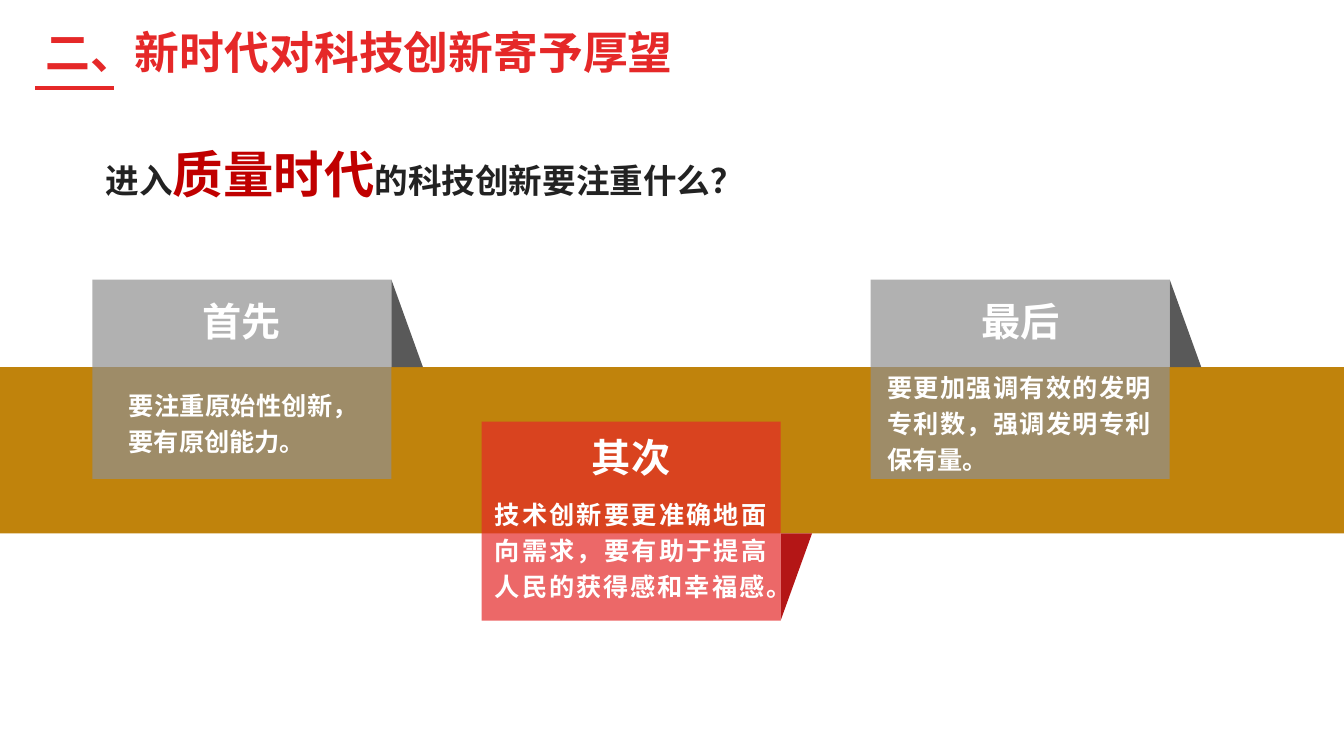
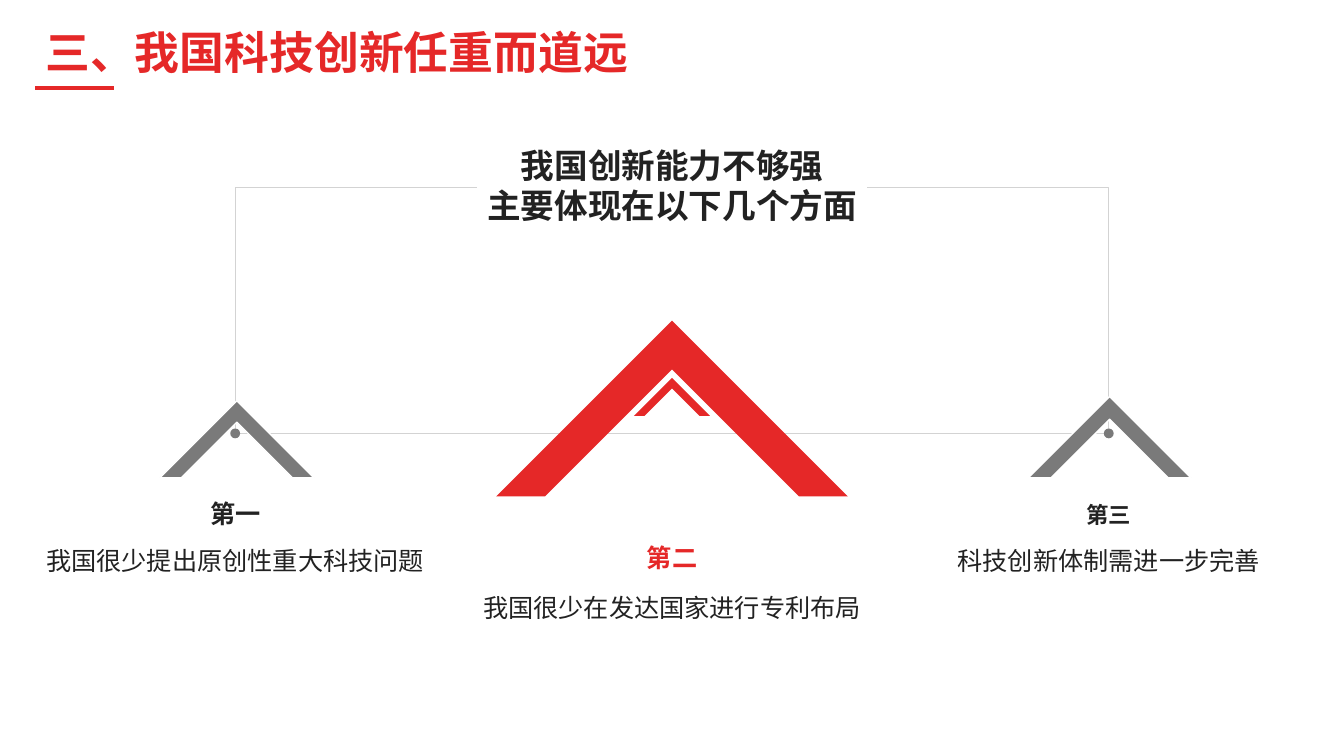
"""Two slides on science and technology innovation, laid out on a 160 by 90 grid."""
import dataclasses

import lxml.etree
import pptx
import pptx.dml.color
import pptx.enum.shapes
import pptx.enum.text
import pptx.oxml.ns
import pptx.util

SHAPE = pptx.enum.shapes.MSO_SHAPE
ALIGN = pptx.enum.text.PP_ALIGN
COLUMNS, ROWS = 160, 90


@dataclasses.dataclass(frozen=True)
class Theme:
    font: str = "Arial"
    red: str = "E52828"
    dark_red: str = "B41616"
    accent: str = "C00000"
    gold: str = "C0830C"
    ink: str = "222222"
    white: str = "FFFFFF"
    card_grey: str = "909090"
    fold_grey: str = "595959"
    chevron_grey: str = "7A7A7A"
    frame_grey: str = "D3D3D3"
    title: int = 32
    keyword: int = 36
    card_heading: int = 28
    question: int = 24
    body: int = 18
    small: int = 16


def grid(cells):
    return pptx.util.Inches(cells / 12)


def rgb(value):
    return pptx.dml.color.RGBColor.from_string(value)


def apply(target, values):
    for name, value in values.items():
        setattr(target, name, value)


class Deck:
    def __init__(self, theme):
        self.theme = theme
        self.show = pptx.Presentation()
        apply(self.show, {"slide_width": grid(COLUMNS), "slide_height": grid(ROWS)})
        self.slide = None

    def start(self, title):
        self.slide = self.show.slides.add_slide(self.show.slide_layouts[5])
        self.underline(4.2, 10.45, 9.35)
        heading = self.slide.shapes.title
        places = zip(("left", "top", "width", "height"), (4.2, 2.3, 80, 7.7))
        apply(heading, {side: grid(cells) for side, cells in places})
        self.fill_text(heading, [[(title, self.theme.title, self.theme.red)]], bold=True)

    def underline(self, left, top, width):
        rule = self.slide.shapes.add_connector(
            pptx.enum.shapes.MSO_CONNECTOR.STRAIGHT,
            grid(left), grid(top), grid(left + width), grid(top))
        apply(rule.line, {"width": pptx.util.Pt(3)})
        rule.line.color.rgb = rgb(self.theme.red)
        lxml.etree.SubElement(rule._element.spPr, pptx.oxml.ns.qn("a:effectLst"))

    def fill_text(self, holder, paragraphs, align=ALIGN.LEFT, bold=False, spacing=1.0):
        frame = holder.text_frame
        apply(frame, {"word_wrap": True,
                      "auto_size": pptx.enum.text.MSO_AUTO_SIZE.NONE,
                      "vertical_anchor": pptx.enum.text.MSO_ANCHOR.TOP})
        for index, runs in enumerate(paragraphs):
            paragraph = frame.add_paragraph() if index else frame.paragraphs[0]
            apply(paragraph, {"alignment": align, "line_spacing": spacing})
            for words, size, colour in runs:
                run = paragraph.add_run()
                run.text = words
                apply(run.font, {"name": self.theme.font, "bold": bold,
                                 "size": pptx.util.Pt(size)})
                run.font.color.rgb = rgb(colour)

    def text(self, left, top, width, height, runs, **style):
        box = self.slide.shapes.add_textbox(*map(grid, (left, top, width, height)))
        self.fill_text(box, [runs], **style)

    def shape(self, kind, left, top, width, height, fill=None, line=None, alpha=None):
        part = self.slide.shapes.add_shape(
            kind, *map(grid, (left, top, width, height)))
        part.shadow.inherit = False
        if fill:
            part.fill.solid()
            part.fill.fore_color.rgb = rgb(fill)
        else:
            part.fill.background()
        if line:
            part.line.color.rgb = rgb(line)
            part.line.width = pptx.util.Pt(1)
        else:
            part.line.fill.background()
        if alpha:
            colour = part._element.spPr.find(".//" + pptx.oxml.ns.qn("a:srgbClr"))
            lxml.etree.SubElement(
                colour, pptx.oxml.ns.qn("a:alpha"), val=str(alpha * 1000))
        return part

    def fold(self, left, top, width, height, fill, flipped):
        corner = self.shape(SHAPE.RIGHT_TRIANGLE, left, top, width, height, fill)
        if flipped:
            corner._element.spPr.xfrm.set("flipV", "1")

    def chevron(self, centre, middle, size, fill, line=None):
        roof = self.shape(SHAPE.HALF_FRAME, centre - size / 2, middle - size / 2,
                          size, size, fill, line)
        roof.rotation = 45
        for index in range(2):
            roof.adjustments[index] = 0.139

    def dot(self, centre, middle, size, colour):
        self.shape(SHAPE.OVAL, centre - size / 2, middle - size / 2,
                   size, size, colour, colour)


def quality_era(deck):
    theme = deck.theme
    deck.start("二、新时代对科技创新寄予厚望")
    deck.text(11.4, 16.45, 80, 8.5, [
        ("进入", theme.question, theme.ink),
        ("质量时代", theme.keyword, theme.accent),
        ("的科技创新要注重什么？", theme.question, theme.ink)], bold=True)

    band_top, band_height, overhang = 43.7, 19.8, 10.4
    card_width, card_height, card_step = 35.6, 23.7, 46.33
    band_bottom = band_top + band_height
    deck.shape(SHAPE.RECTANGLE, 0, band_top, COLUMNS, band_height, theme.gold)
    cards = [
        ("首先", "要注重原始性创新，要有原创能力。", False, 1.5, (3.15, 11.8, 29.65)),
        ("其次", "技术创新要更准确地面向需求，要有助于提高人民的获得感和幸福感。",
         True, 0.75, (0.4, 7.9, 34.7)),
        ("最后", "要更加强调有效的发明专利数，强调发明专利保有量。",
         False, 1.5, (0.8, 9.7, 33.75)),
    ]
    for index, (heading, advice, lowered, drop, inset) in enumerate(cards):
        left = 11 + index * card_step
        if lowered:
            top, fold_top = band_bottom + overhang - card_height, band_bottom
            face, shade = theme.red, theme.dark_red
        else:
            top = fold_top = band_top - overhang
            face, shade = theme.card_grey, theme.fold_grey
        deck.fold(left + card_width, fold_top, 3.75, overhang, shade, lowered)
        deck.shape(SHAPE.FLOWCHART_PROCESS, left, top, card_width, card_height,
                   face, alpha=70)
        deck.text(left, top + drop, card_width, 7,
                  [(heading, theme.card_heading, theme.white)],
                  align=ALIGN.CENTER, bold=True)
        indent, descent, width = inset
        deck.text(left + indent, top + descent, width, 14.3,
                  [(advice, theme.body, theme.white)],
                  align=ALIGN.JUSTIFY, bold=True, spacing=1.2)


def long_road(deck):
    theme = deck.theme
    deck.start("三、我国科技创新任重而道远")
    left, centre, right = 28, COLUMNS / 2, 132
    frame_top, frame_bottom = 22.3, 51.6
    deck.shape(SHAPE.RECTANGLE, left, frame_top, right - left,
               frame_bottom - frame_top, line=theme.frame_grey)
    chevrons = [
        (left + 0.2, 56.9, 13, theme.chevron_grey, theme.white),
        (right + 0.1, 56.9, 13.7, theme.chevron_grey, theme.white),
        (centre, 59.1, 29.6, theme.red, None),
        (centre, 49.5, 6.4, theme.red, None),
    ]
    for chevron in chevrons:
        deck.chevron(*chevron)
    for side in (left, right):
        deck.dot(side, frame_bottom, 1, theme.chevron_grey)

    topic = deck.shape(SHAPE.RECTANGLE, centre - 23.2, 16.6, 46.4, 10.9, theme.white)
    deck.fill_text(topic, [[(words, theme.question, theme.ink)] for words in
                           ("我国创新能力不够强", "主要体现在以下几个方面")],
                   align=ALIGN.CENTER, bold=True)
    points = [
        (left, "第一", 58.7, theme.body, theme.ink,
         "我国很少提出原创性重大科技问题", 63.6),
        (centre, "第二", 64, theme.body, theme.red,
         "我国很少在发达国家进行专利布局", 69.2),
        (right, "第三", 59.1, theme.small, theme.ink,
         "科技创新体制需进一步完善", 63.6),
    ]
    width = 50
    for middle, order, order_top, size, colour, weakness, weakness_top in points:
        edge = middle - width / 2
        deck.text(edge, order_top, width, 4.8, [(order, size, colour)],
                  align=ALIGN.CENTER, bold=True)
        deck.text(edge, weakness_top, width, 5.5,
                  [(weakness, theme.body, theme.ink)],
                  align=ALIGN.CENTER, spacing=1.2)


def main():
    deck = Deck(Theme())
    quality_era(deck)
    long_road(deck)
    deck.show.save("out.pptx")


if __name__ == "__main__":
    main()
